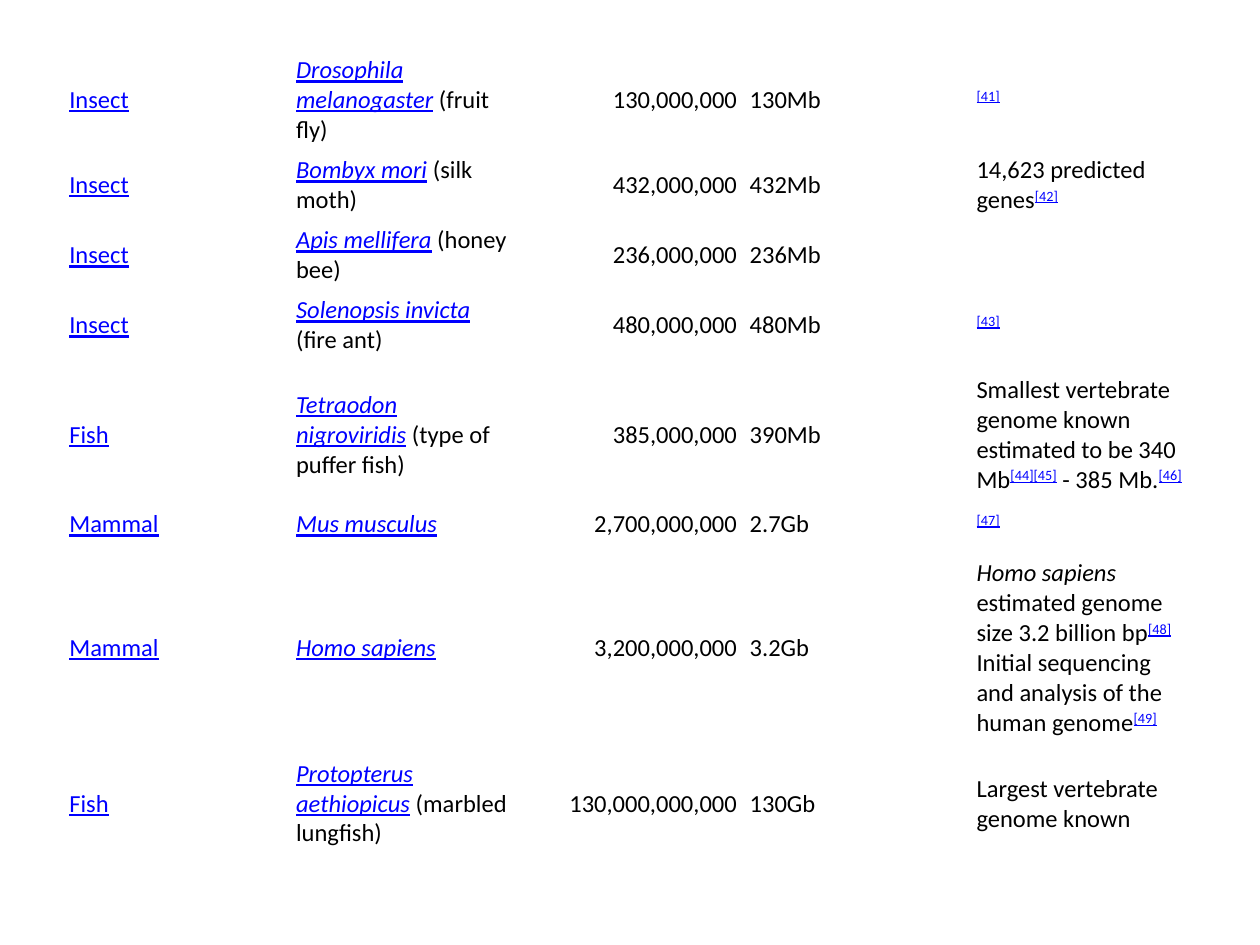
import pptx
import pptx.util
import pptx.dml.color
import pptx.enum.text
from dataclasses import dataclass


@dataclass
class Theme:
    font: str = "Calibri"
    size: int = 14
    ink: str = "000000"
    link: str = "0000FF"
    style: str = "{2D5ABB26-0587-4C30-8999-92F81FD0307C}"  # no style, no grid


theme = Theme()
inch = pptx.util.Inches

# Each run is its text and marks: l = link, i = italic, s = superscript
# Each row: height, class, species, common name, base pairs, short size, note
genomes = [
    (0.6, "Insect", "Drosophila melanogaster", " (fruit fly)",
     "130,000,000", "130Mb", [("[41]", "ls")]),
    (0.6, "Insect", "Bombyx mori", " (silk moth)",
     "432,000,000", "432Mb", [("14,623 predicted genes", ""), ("[42]", "ls")]),
    (0.42, "Insect", "Apis mellifera", " (honey bee)",
     "236,000,000", "236Mb", []),
    (0.6, "Insect", "Solenopsis invicta", " (fire ant)",
     "480,000,000", "480Mb", [("[43]", "ls")]),
    (1.14, "Fish", "Tetraodon nigroviridis", " (type of puffer fish)",
     "385,000,000", "390Mb",
     [("Smallest vertebrate genome known estimated to be 340 Mb", ""),
      ("[44][45]", "ls"), (" - 385 Mb.", ""), ("[46]", "ls")]),
    (0.24, "Mammal", "Mus musculus", "",
     "2,700,000,000", "2.7Gb", [("[47]", "ls")]),
    (1.69, "Mammal", "Homo sapiens", "",
     "3,200,000,000", "3.2Gb",
     [("Homo sapiens", "i"), (" estimated genome size 3.2 billion bp", ""),
      ("[48]", "ls"),
      (" Initial sequencing and analysis of the human genome", ""),
      ("[49]", "ls")]),
    (0.78, "Fish", "Protopterus aethiopicus", " (marbled lungfish)",
     "130,000,000,000", "130Gb", [("Largest vertebrate genome known", "")]),
]


def write(cell, runs):
    """Fill a cell with marked runs."""
    line = cell.text_frame.paragraphs[0]
    for text, marks in runs:
        run = line.add_run()
        run.text = text
        font = run.font
        font.name = theme.font
        font.size = pptx.util.Pt(theme.size)
        hue = theme.link if "l" in marks else theme.ink
        font.color.rgb = pptx.dml.color.RGBColor.from_string(hue)
        font.underline = "l" in marks
        font.italic = "i" in marks
        if "s" in marks:
            run.font._element.set("baseline", "30000")
    return line


# Slide
deck = pptx.Presentation()
deck.slide_width, deck.slide_height = inch(10), inch(7.5)
slide = deck.slides.add_slide(deck.slide_layouts[6])

# Plain table: five equal columns within a 5% side margin
wide = deck.slide_width
frame = slide.shapes.add_table(
    len(genomes), 5, int(wide * 0.05), inch(0.42), int(wide * 0.9), inch(6.07))
table = frame.table
table.first_row = table.horz_banding = False
table._tbl.tblPr[0].text = theme.style

# Rows of genomes
for row, (high, kind, name, common, pairs, short, note) in enumerate(genomes):
    table.rows[row].height = inch(high)
    species = [(name, "li")] + ([(common, "")] if common else [])
    parts = [[(kind, "l")], species, [(pairs, "")], [(short, "")], note]
    for col, runs in enumerate(parts):
        cell = table.cell(row, col)
        cell.fill.background()
        cell.vertical_anchor = pptx.enum.text.MSO_ANCHOR.MIDDLE
        cell.margin_left = cell.margin_right = inch(0.05)
        cell.margin_top = cell.margin_bottom = inch(0.02)
        line = write(cell, runs)
        if col == 2:
            line.alignment = pptx.enum.text.PP_ALIGN.RIGHT

deck.save("out.pptx")
